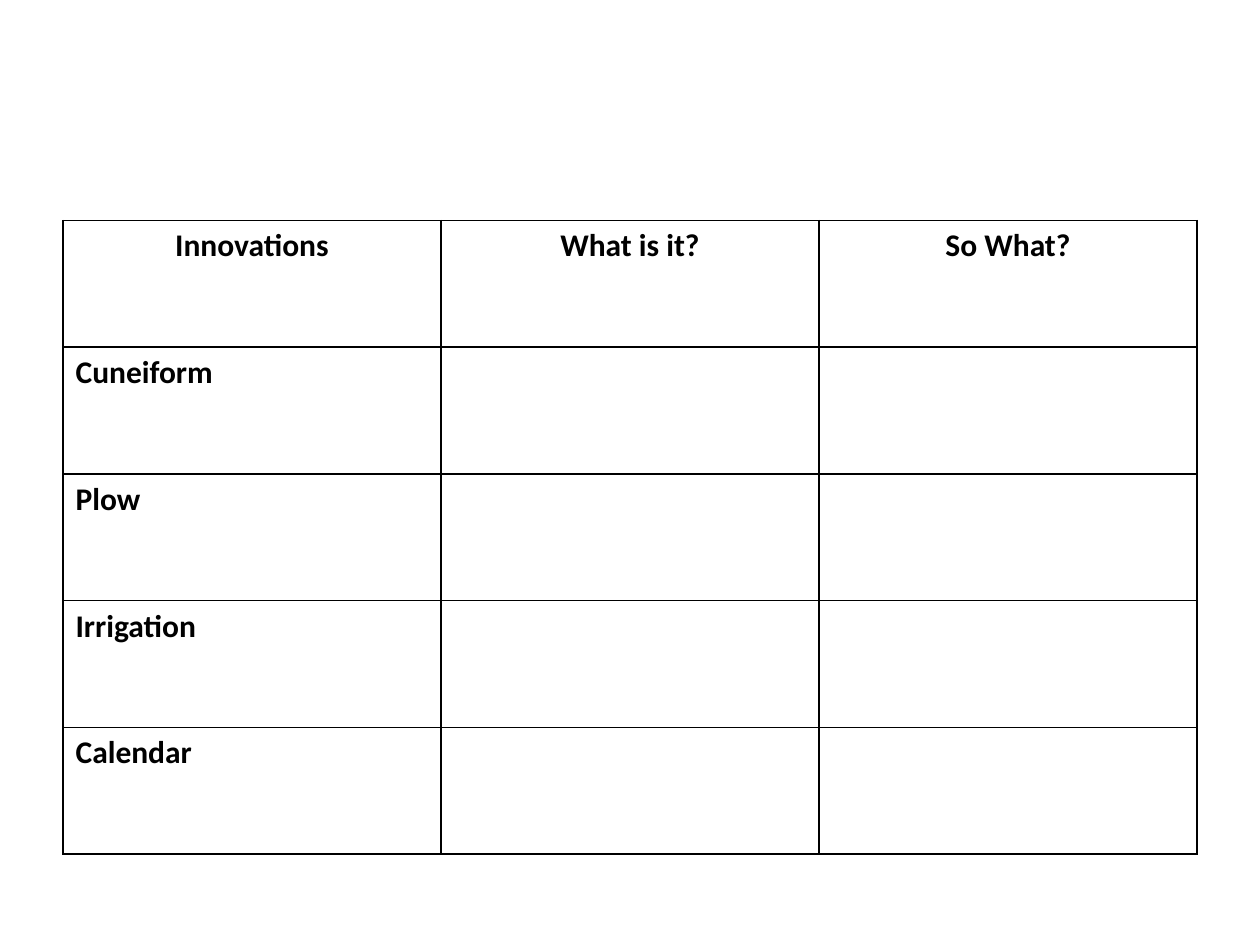
from lxml.etree import SubElement as Sub
from pptx import Presentation
from pptx.dml.color import RGBColor
from pptx.enum.text import PP_ALIGN as Align
from pptx.oxml.ns import qn
from pptx.util import Inches, Pt

BLACK = RGBColor(0, 0, 0)
HEADS = ["Innovations", "What is it?", "So What?"]
ITEMS = ["Cuneiform", "Plow", "Irrigation", "Calendar"]
COL, ROW = Inches(3), Inches(1.006)


def edge(cell):
    """Draw a thin black line on all four sides of the cell, then clear its fill."""
    props = cell._tc.get_or_add_tcPr()
    for side in ("lnL", "lnR", "lnT", "lnB"):
        line = Sub(props, qn("a:" + side), w=str(Pt(1)))
        fill = Sub(line, qn("a:solidFill"))
        Sub(fill, qn("a:srgbClr"), val=str(BLACK))
    cell.fill.background()


deck = Presentation()
deck.slide_width, deck.slide_height = Inches(10), Inches(7.5)
slide = deck.slides.add_slide(deck.slide_layouts[6])

rows = [HEADS] + [[item, "", ""] for item in ITEMS]
frame = slide.shapes.add_table(len(rows), len(HEADS), Inches(0.5), Inches(1.75),
                               COL * len(HEADS), ROW * len(rows))
table = frame.table
table.horz_banding = False
for col in table.columns:
    col.width = COL

for r, words in enumerate(rows):
    table.rows[r].height = ROW
    for c, text in enumerate(words):
        cell = table.cell(r, c)
        edge(cell)
        if not text:
            continue
        para = cell.text_frame.paragraphs[0]
        para.alignment = Align.CENTER if r == 0 else Align.LEFT
        run = para.add_run()
        run.text = text
        font = run.font
        font.name, font.size, font.bold = "Calibri", Pt(18), True
        font.color.rgb = BLACK

deck.save("out.pptx")
